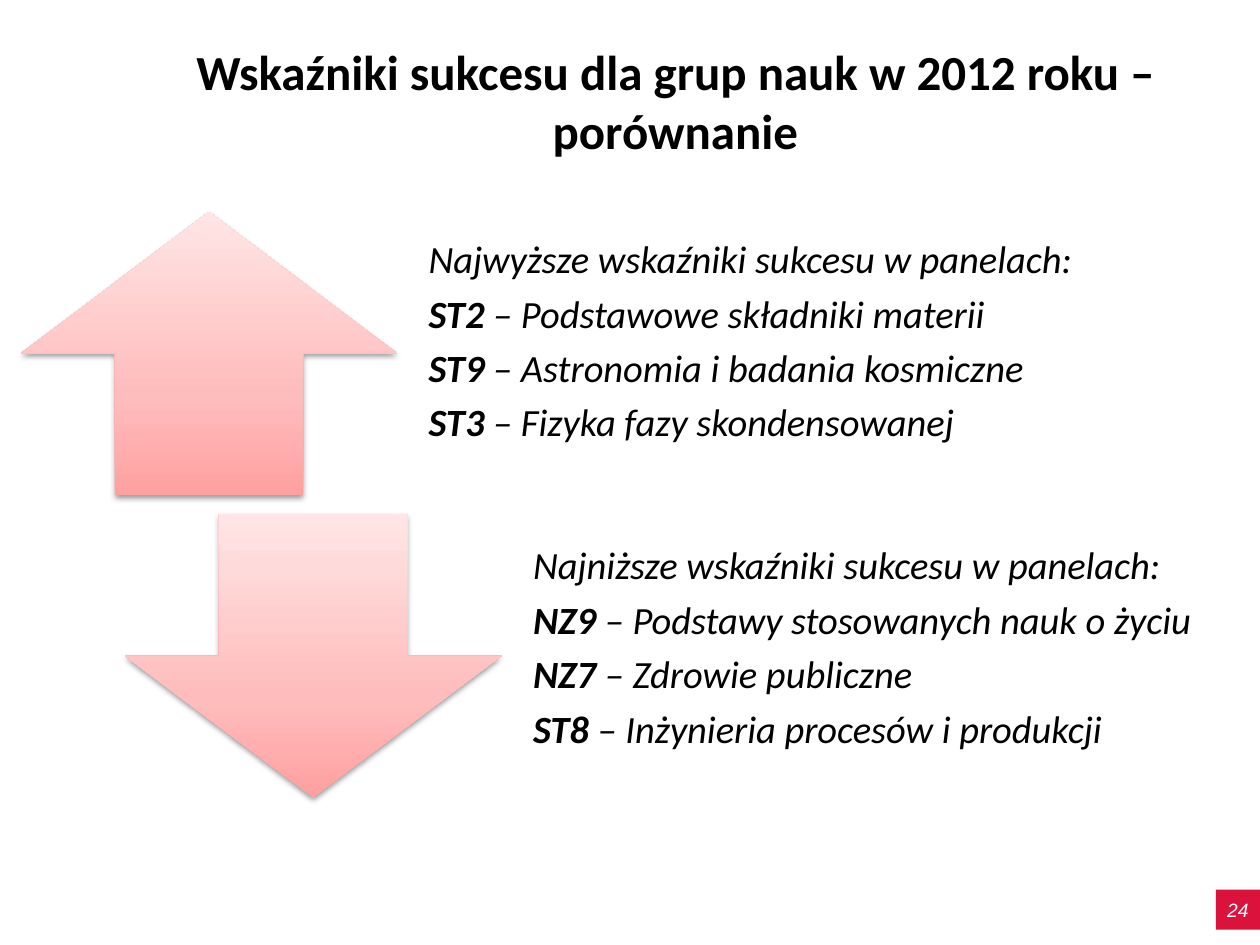
"""Build the slide comparing the highest and lowest success rates by panel."""
from lxml.etree import fromstring
from pptx import Presentation
from pptx.dml.color import RGBColor
from pptx.enum.shapes import MSO_SHAPE
from pptx.enum.text import MSO_ANCHOR, MSO_AUTO_SIZE, PP_ALIGN
from pptx.util import Pt

COLORS = {
    "text": "000000", "badge": "DB133C", "badge_text": "FFFFFF", "shadow": "000000",
    "arrow_base": "FFA0A0", "arrow_middle": "FFBCBC", "arrow_top": "FFE5E5",
}
ARROW_STOPS = ((0, "arrow_base"), (35, "arrow_middle"), (100, "arrow_top"))
NAMESPACE = 'xmlns:a="http://schemas.openxmlformats.org/drawingml/2006/main"'
ARROW_SIZE = (215.3, 162)
PANEL_GROUPS = (
    (MSO_SHAPE.UP_ARROW, (11.8, 121), (232.6, 121, 404, 162),
     "Najwyższe wskaźniki sukcesu w panelach:",
     (("ST2", "Podstawowe składniki materii"),
      ("ST9", "Astronomia i badania kosmiczne"),
      ("ST3", "Fizyka fazy skondensowanej"))),
    (MSO_SHAPE.DOWN_ARROW, (71.3, 293.8), (292.3, 296, 413.3, 162),
     "Najniższe wskaźniki sukcesu w panelach:",
     (("NZ9", "Podstawy stosowanych nauk o życiu"),
      ("NZ7", "Zdrowie publiczne"),
      ("ST8", "Inżynieria procesów i produkcji"))),
)


class SlideBuilder:
    """Hold the text style and the current slide."""

    def __init__(self, page, font="Calibri", body_size=22):
        self.page = page
        self.font = font
        self.body_size = body_size

    def add_span(self, para, text, size=None, bold=False, italic=False,
                 font=None, color="text"):
        """Add one formatted run to a paragraph."""
        span = para.add_run()
        span.text = text
        span.font.name = font or self.font
        span.font.size = Pt(size or self.body_size)
        span.font.bold = bold
        span.font.italic = italic
        span.font.color.rgb = RGBColor.from_string(COLORS[color])

    def set_insets(self, frame, left, top, right, bottom):
        """Set the four insets of a text frame in points."""
        frame.margin_left, frame.margin_top = Pt(left), Pt(top)
        frame.margin_right, frame.margin_bottom = Pt(right), Pt(bottom)

    def add_title(self, text, left, top, width, height):
        """Place and format the title placeholder."""
        title = self.page.shapes.title
        title.left, title.top = Pt(left), Pt(top)
        title.width, title.height = Pt(width), Pt(height)
        frame = title.text_frame
        frame.auto_size = MSO_AUTO_SIZE.NONE
        frame.vertical_anchor = MSO_ANCHOR.BOTTOM
        para = frame.paragraphs[0]
        para.alignment = PP_ALIGN.CENTER
        self.add_span(para, text, size=28, bold=True)

    def add_arrow(self, preset, left, top, width, height):
        """Add a block arrow with a vertical gradient and a soft shadow."""
        arrow = self.page.shapes.add_shape(preset, Pt(left), Pt(top), Pt(width), Pt(height))
        arrow.line.fill.background()
        stops = "".join(
            f'<a:gs pos="{position * 1000}"><a:srgbClr val="{COLORS[name]}"/></a:gs>'
            for position, name in ARROW_STOPS)
        gradient = fromstring(
            f'<a:gradFill {NAMESPACE} rotWithShape="1"><a:gsLst>{stops}</a:gsLst>'
            '<a:lin ang="16200000" scaled="0"/></a:gradFill>')
        shadow = fromstring(
            f'<a:effectLst {NAMESPACE}><a:outerShdw blurRad="{Pt(3.1)}" dist="{Pt(1.6)}" '
            f'dir="5400000" rotWithShape="0"><a:srgbClr val="{COLORS["shadow"]}">'
            '<a:alpha val="38000"/></a:srgbClr></a:outerShdw></a:effectLst>')
        properties = arrow.element.spPr
        properties.insert(2, gradient)
        properties.append(shadow)

    def add_panel_list(self, heading, panels, left, top, width, height):
        """Add a heading followed by panel codes and names."""
        box = self.page.shapes.add_textbox(Pt(left), Pt(top), Pt(width), Pt(height))
        frame = box.text_frame
        frame.word_wrap = True
        frame.vertical_anchor = MSO_ANCHOR.MIDDLE
        self.set_insets(frame, 12.3, 0, 12.3, 12.3)
        self.add_span(frame.paragraphs[0], heading, italic=True)
        for code, name in panels:
            para = frame.add_paragraph()
            self.add_span(para, f"{code} ", bold=True, italic=True)
            self.add_span(para, f"– {name}", italic=True)
        for para in frame.paragraphs:
            para.line_spacing = 0.9
            para.space_after = Pt(7.3)

    def add_page_number(self, number, left, top, width, height):
        """Add the coloured page number badge."""
        badge = self.page.shapes.add_shape(
            MSO_SHAPE.RECTANGLE, Pt(left), Pt(top), Pt(width), Pt(height))
        badge.shadow.inherit = False
        badge.fill.solid()
        badge.fill.fore_color.rgb = RGBColor.from_string(COLORS["badge"])
        badge.line.fill.background()
        frame = badge.text_frame
        frame.word_wrap = False
        frame.vertical_anchor = MSO_ANCHOR.MIDDLE
        self.set_insets(frame, 0, 0, 0, 0)
        para = frame.paragraphs[0]
        para.alignment = PP_ALIGN.CENTER
        self.add_span(para, number, size=11, italic=True, font="Arial", color="badge_text")


def main():
    """Create the deck and save it."""
    deck = Presentation()
    deck.slide_width, deck.slide_height = Pt(720), Pt(540)
    builder = SlideBuilder(deck.slides.add_slide(deck.slide_layouts[5]))
    builder.add_title("Wskaźniki sukcesu dla grup nauk w 2012 roku – porównanie",
                      87.8, 5.8, 596.2, 88.6)
    for preset, arrow_corner, text_area, heading, panels in PANEL_GROUPS:
        builder.add_arrow(preset, *arrow_corner, *ARROW_SIZE)
        builder.add_panel_list(heading, panels, *text_area)
    builder.add_page_number("24", 694.8, 508.3, 25.2, 23)
    deck.save("out.pptx")


if __name__ == "__main__":
    main()
